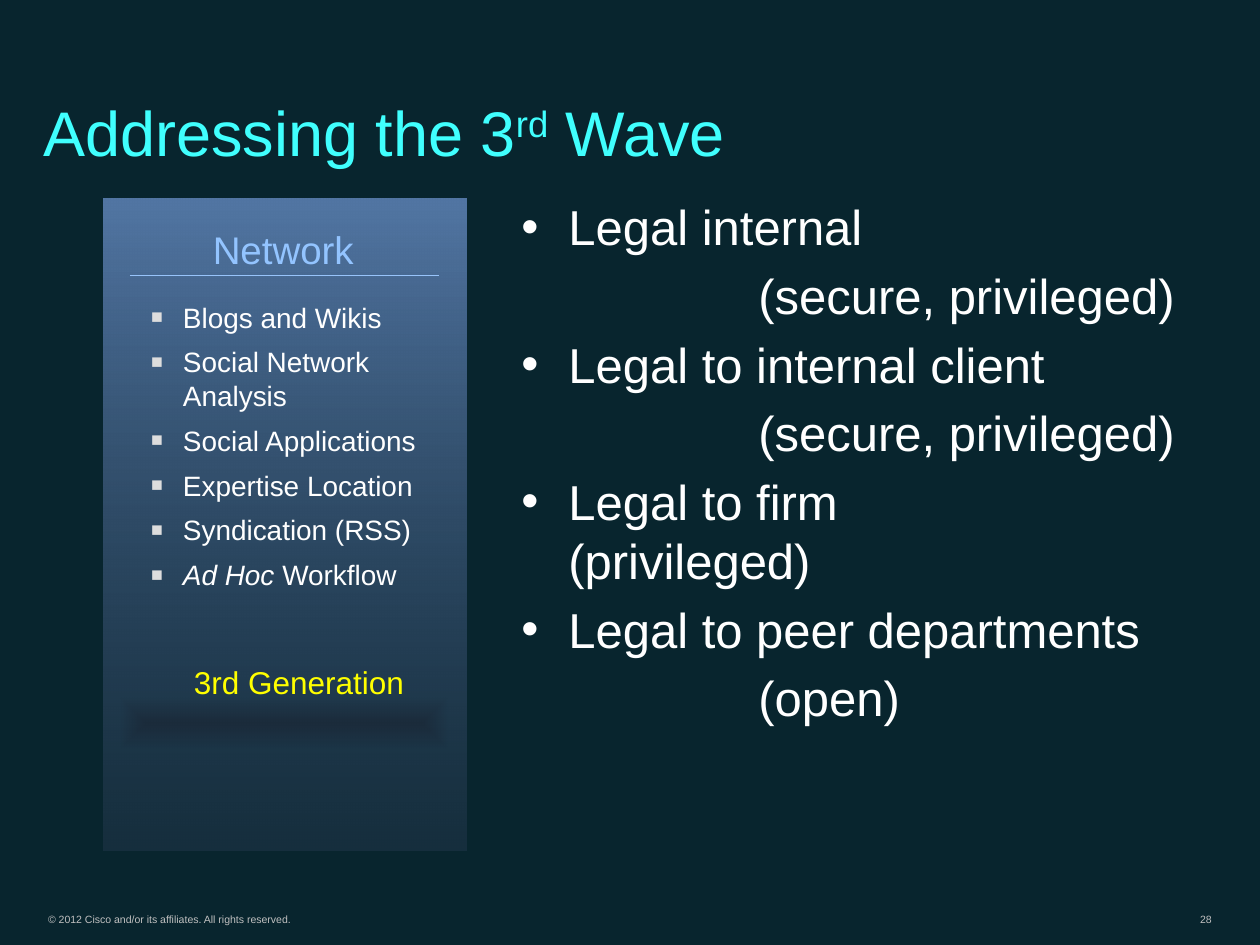
import pptx
import pptx.dml.color
import pptx.enum.shapes
import pptx.enum.text
import pptx.oxml
import pptx.oxml.ns
import pptx.util
from lxml import etree
from pptx.util import Cm, Pt

FONT = "Arial"
WHITE = "FFFFFF"
MUTED = "C0C0C0"
ALIGN = pptx.enum.text.PP_ALIGN
ANCHOR = pptx.enum.text.MSO_ANCHOR
AUTO_SIZE = pptx.enum.text.MSO_AUTO_SIZE
SHAPE = pptx.enum.shapes.MSO_SHAPE
CONNECTOR = pptx.enum.shapes.MSO_CONNECTOR


def color(value):
    return pptx.dml.color.RGBColor.from_string(value)


def add_element(parent, tag, **attributes):
    return etree.SubElement(parent, pptx.oxml.ns.qn(tag), attributes)


def add_bullet(para, char, tint, percent):
    properties = para._p.get_or_add_pPr()
    add_element(add_element(properties, "a:buClr"), "a:srgbClr", val=tint)
    add_element(properties, "a:buSzPct", val=str(percent * 1000))
    add_element(properties, "a:buFont", typeface=FONT)
    add_element(properties, "a:buChar", char=char)


def write(para, text, size=18, tint=WHITE, align=ALIGN.LEFT, margin=0, hanging=0,
          before=0, bullet=None):
    """Each span of text is a string or a pair of a string and its format."""
    properties = para._p.get_or_add_pPr()
    if bullet:
        add_bullet(para, *bullet)
    properties.set("marL", str(Cm(margin)))
    properties.set("indent", str(Cm(-hanging)))
    para.alignment = align
    para.space_before = Pt(before)
    for part in [text] if isinstance(text, str) else text:
        words, style = (part, None) if isinstance(part, str) else part
        if style == "break":
            para.add_line_break()
        span = para.add_run()
        span.text = words
        span.font.name = FONT
        span.font.size = Pt(size)
        span.font.color.rgb = color(tint)
        if style == "italic":
            span.font.italic = True
        if style == "superscript":
            span.font._element.set("baseline", "30000")


def format_frame(frame, anchor=ANCHOR.TOP, wrap=True, side=0.23, edge=0.11):
    frame.word_wrap = wrap
    frame.auto_size = AUTO_SIZE.NONE
    frame.vertical_anchor = anchor
    frame.margin_left = frame.margin_right = Cm(side)
    frame.margin_top = frame.margin_bottom = Cm(edge)


def add_text(page, place, text, anchor=ANCHOR.TOP, wrap=True, **style):
    box = page.shapes.add_textbox(*map(Cm, place))
    format_frame(box.text_frame, anchor, wrap)
    write(box.text_frame.paragraphs[0], text, **style)


def add_list(page, place, items, before, side=0.23, edge=0.11, **style):
    box = page.shapes.add_textbox(*map(Cm, place))
    frame = box.text_frame
    format_frame(frame, side=side, edge=edge)
    for index, (text, changes) in enumerate(items):
        para = frame.add_paragraph() if index else frame.paragraphs[0]
        write(para, text, before=before if index else 0, **{**style, **changes})


def add_gradient_panel(page, place, stops, centered=False):
    panel = page.shapes.add_shape(SHAPE.RECTANGLE, *map(Cm, place))
    panel.shadow.inherit = False
    panel.line.fill.background()
    gradient = pptx.oxml.parse_xml(f'<a:gradFill {pptx.oxml.ns.nsdecls("a")}/>')
    stop_list = add_element(gradient, "a:gsLst")
    for position, tint, alpha in stops:
        stop = add_element(stop_list, "a:gs", pos=str(position * 1000))
        tone = add_element(stop, "a:srgbClr", val=tint)
        add_element(tone, "a:alpha", val=str(alpha * 1000))
    if centered:
        shade = add_element(gradient, "a:path")
        shade.set("path", "shape")
        add_element(shade, "a:fillToRect", l="50000", t="50000", r="50000", b="50000")
    else:
        add_element(gradient, "a:lin", ang="5400000", scaled="0")
    panel._element.spPr.find(pptx.oxml.ns.qn("a:prstGeom")).addnext(gradient)


def add_rule(page, left, right, top, tint, width):
    rule = page.shapes.add_connector(
        CONNECTOR.STRAIGHT, Cm(left), Cm(top), Cm(right), Cm(top))
    rule.line.color.rgb = color(tint)
    rule.line.width = Pt(width)
    add_element(rule._element.spPr, "a:effectLst")


def add_title(page, place, text, **style):
    title = page.shapes.title
    title.left, title.top, title.width, title.height = map(Cm, place)
    format_frame(title.text_frame, ANCHOR.BOTTOM, edge=0.13)
    para = title.text_frame.paragraphs[0]
    write(para, text, **style)
    para.line_spacing = 0.8


def main():
    deck = pptx.Presentation()
    deck.slide_width, deck.slide_height = Cm(25.4), Cm(19.05)
    page = deck.slides.add_slide(deck.slide_layouts[5])
    page.background.fill.solid()
    page.background.fill.fore_color.rgb = color("08252E")

    add_title(page, (0.64, 1.19, 23.83, 2.34),
              ["Addressing the 3", ("rd", "superscript"), " Wave"],
              size=36, tint="40FFFE")
    add_text(page, (0.74, 18.29, 9.5, 0.48),
             "© 2012 Cisco and/or its affiliates. All rights reserved.",
             anchor=ANCHOR.BOTTOM, size=6, tint=MUTED)
    add_text(page, (23.95, 18.29, 0.71, 0.48), "28", anchor=ANCHOR.BOTTOM,
             wrap=False, size=6, tint=MUTED, align=ALIGN.RIGHT)

    add_gradient_panel(page, (2.44, 14.07, 6.58, 1.02),
                       [(0, "000000", 56), (100, "000000", 0)], centered=True)
    add_gradient_panel(page, (2.08, 4.01, 7.32, 13.13),
                       [(0, "678DC5", 78), (100, "30415B", 35)])

    tools = ["Blogs and Wikis", "Social Network Analysis", "Social Applications",
             "Expertise Location", "Syndication (RSS)",
             [("Ad Hoc ", "italic"), "Workflow"]]
    add_list(page, (2.82, 5.94, 6.15, 7.34), [(tool, {}) for tool in tools],
             before=6.4, size=16, margin=0.64, hanging=0.64,
             bullet=("■", "DDDDDD", 70))
    add_text(page, (4.06, 4.45, 3.3, 1.07), "Network", wrap=False,
             size=22, tint="93C4FF")
    add_rule(page, 2.62, 8.84, 5.56, "98C4FA", 0.75)
    add_text(page, (3.68, 13.26, 5.16, 0.91), "3rd Generation", wrap=False,
             size=18, tint="FFFF00")

    point = {"margin": 0.95, "hanging": 0.95, "bullet": ("•", WHITE, 100)}
    note = {"margin": 4.78}
    add_list(page, (10.26, 3.84, 15.14, 11.28), [
        ("Legal internal", point),
        ("(secure, privileged)", note),
        ("Legal to internal client", point),
        ("(secure, privileged)", note),
        (["Legal to firm", ("(privileged)", "break")], point),
        ("Legal to peer departments", point),
        ("(open)", note),
    ], before=5.6, side=0.25, edge=0.13, size=28)

    deck.save("out.pptx")


if __name__ == "__main__":
    main()
